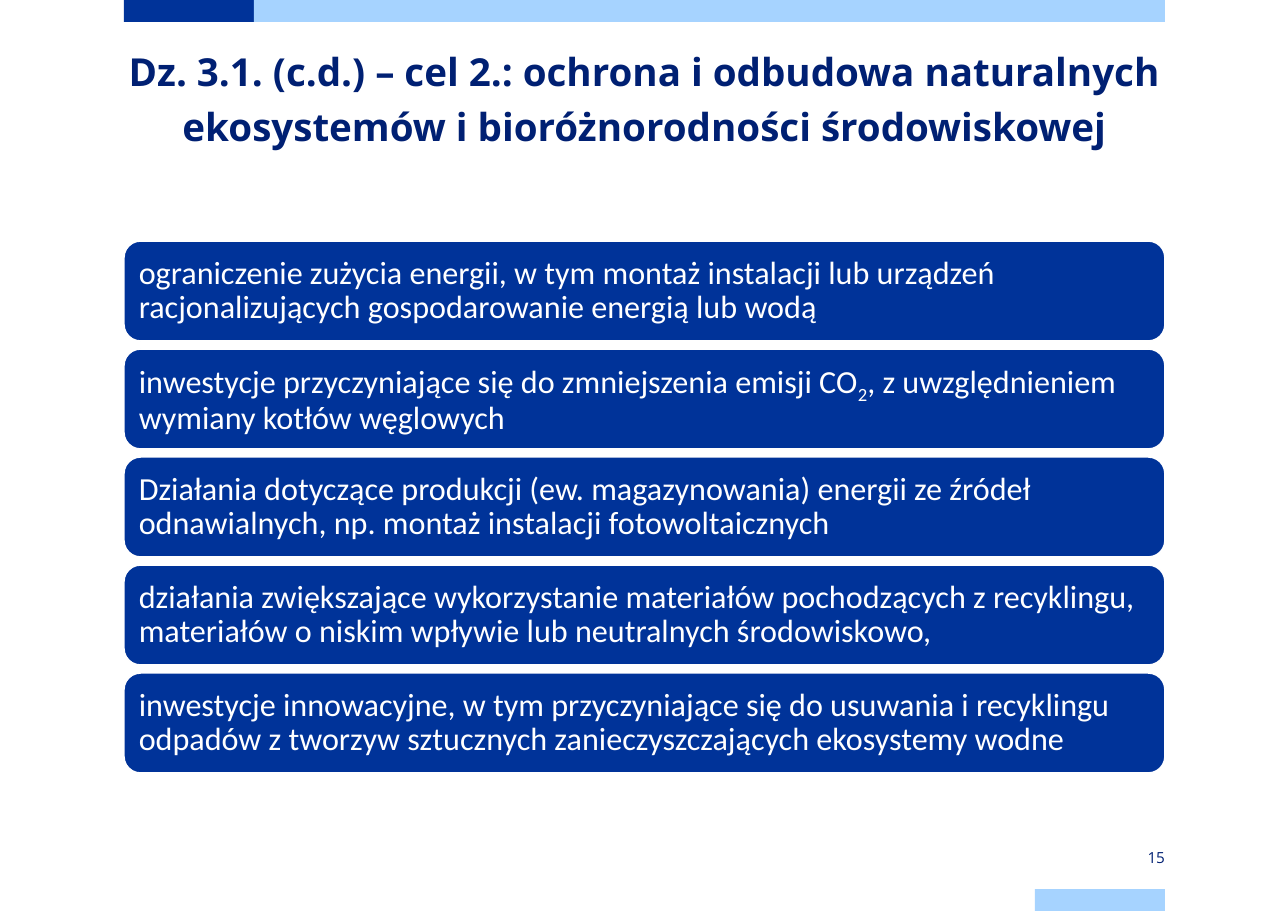
import pptx
import pptx.util
import pptx.dml.color
import pptx.enum.shapes
import pptx.enum.text

TITLE = ("Dz. 3.1. (c.d.) – cel 2.: ochrona i odbudowa naturalnych "
         "ekosystemów i bioróżnorodności środowiskowej")
PAGE_NUMBER = "15"
SUBSCRIPT = "2"
# Each measure is a list of runs
MEASURES = [
    ["ograniczenie zużycia energii, w tym montaż instalacji lub urządzeń "
     "racjonalizujących gospodarowanie energią lub wodą"],
    ["inwestycje przyczyniające się do zmniejszenia emisji CO", SUBSCRIPT,
     ", z uwzględnieniem wymiany kotłów węglowych"],
    ["Działania dotyczące produkcji (ew. magazynowania) energii ze źródeł "
     "odnawialnych, np. montaż instalacji fotowoltaicznych"],
    ["działania zwiększające wykorzystanie materiałów pochodzących z recyklingu, "
     "materiałów o niskim wpływie lub neutralnych środowiskowo,"],
    ["inwestycje innowacyjne, w tym przyczyniające się do usuwania i recyklingu "
     "odpadów z tworzyw sztucznych zanieczyszczających ekosystemy wodne"],
]

BLUE = pptx.dml.color.RGBColor(0x00, 0x33, 0x99)
LIGHT_BLUE = pptx.dml.color.RGBColor(0xA6, 0xD3, 0xFF)
NAVY = pptx.dml.color.RGBColor(0x00, 0x20, 0x73)
WHITE = pptx.dml.color.RGBColor(0xFF, 0xFF, 0xFF)

# Layout in px
SCALE = 914400 / 110.2
SLIDE_W, SLIDE_H = 1288, 911
LEFT, WIDTH = 124, 1041
BAR_H, ACCENT_W = 22, 130
RIGHT = LEFT + WIDTH
CARD_TOP, CARD_H, CARD_PITCH, CARD_INSET = 241, 100, 108, 10

SHAPE = pptx.enum.shapes.MSO_SHAPE
ALIGN = pptx.enum.text.PP_ALIGN
ANCHOR = pptx.enum.text.MSO_ANCHOR


def px(length):
    return pptx.util.Emu(round(length * SCALE))


def add_block(slide, kind, box, fill, outline=None):
    block = slide.shapes.add_shape(kind, *map(px, box))
    block.shadow.inherit = False
    block.fill.solid()
    block.fill.fore_color.rgb = fill
    if outline is None:
        block.line.fill.background()
    else:
        block.line.color.rgb = outline
        block.line.width = pptx.util.Pt(1)
    return block


def write(holder, runs, font, size, color, align, anchor, inset=0, spacing=None, bold=False):
    frame = holder.text_frame
    frame.word_wrap = True
    frame.vertical_anchor = anchor
    frame.margin_left = frame.margin_right = px(inset)
    frame.margin_top = frame.margin_bottom = px(inset)
    paragraph = frame.paragraphs[0]
    paragraph.alignment = align
    paragraph.line_spacing = spacing
    for text in runs:
        run = paragraph.add_run()
        run.text = text
        run.font.name = font
        run.font.size = pptx.util.Pt(size)
        run.font.bold = bold
        run.font.color.rgb = color
        if text == SUBSCRIPT:
            run.font._element.set("baseline", "-25000")


def main():
    deck = pptx.Presentation()
    deck.slide_width, deck.slide_height = px(SLIDE_W), px(SLIDE_H)
    slide = deck.slides.add_slide(deck.slide_layouts[6])

    # Top and bottom bars
    bars = [
        (LEFT, 0, ACCENT_W, BLUE),
        (LEFT + ACCENT_W, 0, WIDTH - ACCENT_W, LIGHT_BLUE),
        (RIGHT - ACCENT_W, SLIDE_H - BAR_H, ACCENT_W, LIGHT_BLUE),
    ]
    for left, top, width, color in bars:
        add_block(slide, SHAPE.RECTANGLE, (left, top, width, BAR_H), color)

    # Title
    title = slide.shapes.add_textbox(px(LEFT), px(39), px(WIDTH), px(130))
    write(title, [TITLE], "Open Sans", 25.2, NAVY, ALIGN.CENTER, ANCHOR.TOP,
          spacing=pptx.util.Pt(36), bold=True)

    # Measure cards
    for row, runs in enumerate(MEASURES):
        box = (LEFT, CARD_TOP + row * CARD_PITCH, WIDTH, CARD_H)
        card = add_block(slide, SHAPE.ROUNDED_RECTANGLE, box, BLUE, WHITE)
        write(card, runs, "Calibri", 21, WHITE, ALIGN.LEFT, ANCHOR.MIDDLE,
              inset=CARD_INSET, spacing=0.9)

    # Page number
    number = slide.shapes.add_textbox(px(RIGHT - ACCENT_W), px(846), px(ACCENT_W), px(BAR_H))
    write(number, [PAGE_NUMBER], "Open Sans", 10, NAVY, ALIGN.RIGHT, ANCHOR.MIDDLE)

    deck.save("out.pptx")


if __name__ == "__main__":
    main()
